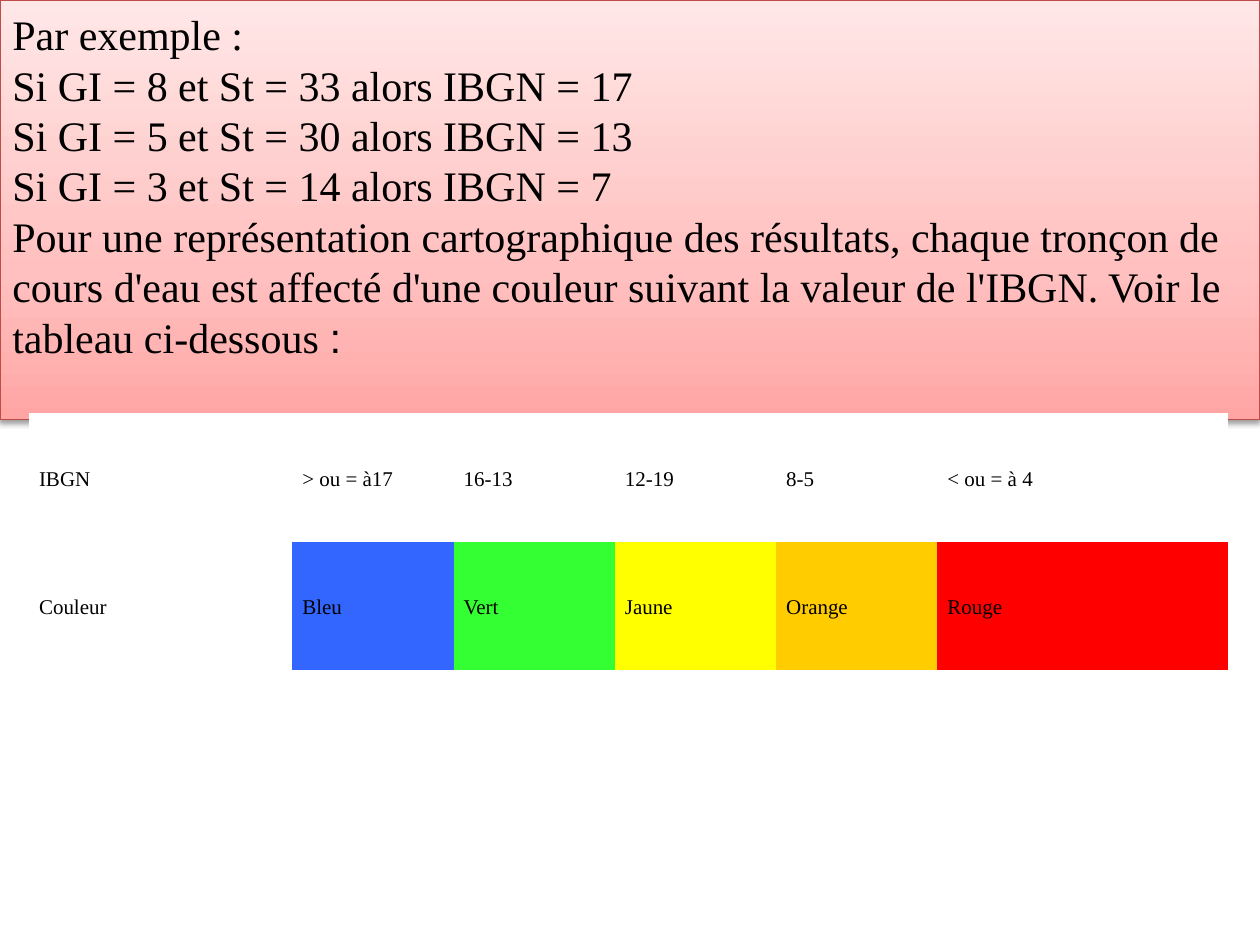
import copy
import pptx
import pptx.util
import pptx.dml.color
import pptx.enum.shapes
import pptx.enum.text
import pptx.oxml
import pptx.oxml.ns

Inches, Pt = pptx.util.Inches, pptx.util.Pt
Anchor = pptx.enum.text.MSO_ANCHOR
Align = pptx.enum.text.PP_ALIGN

RULES = [
    "Par exemple :\u00a0",
    "Si GI = 8 et St = 33 alors IBGN = 17\u00a0",
    "Si GI = 5 et St = 30 alors IBGN = 13\u00a0",
    "Si GI = 3 et St = 14 alors IBGN = 7",
]
NOTE = (
    "Pour une représentation cartographique des résultats, chaque tronçon de "
    "cours d'eau est affecté d'une couleur suivant la valeur de l'IBGN. "
    "Voir le tableau ci-dessous\u00a0"
)
SCALE = [
    ("IBGN", "Couleur", "FFFFFF", 2.09),
    ("> ou = à17", "Bleu", "3366FF", 1.28),
    ("16-13", "Vert", "33FF33", 1.28),
    ("12-19", "Jaune", "FFFF00", 1.28),
    ("8-5", "Orange", "FFCC00", 1.28),
    ("< ou = à 4", "Rouge", "FF0000", 2.31),
]
THEME = {
    "font": "Times New Roman",
    "mark": "Arial",
    "ink": "000000",
    "paper": "FFFFFF",
    "edge": "BF4C48",
    "fade": [(0, "FFA6A5"), (0.35, "FFC0BF"), (1, "FFE7E7")],
    "text": 24,
    "cell": 12,
}
PLAIN = "{2D5ABB26-0587-4C30-8999-92F81FD0307C}"
ROW = 1.02
PAD = 0.08


def rgb(code):
    return pptx.dml.color.RGBColor.from_string(code)


def style(run, size, face=THEME["font"]):
    run.font.size = Pt(size)
    run.font.name = face
    run.font.color.rgb = rgb(THEME["ink"])


def fade(fill):
    fill.gradient()
    fill.gradient_angle = 90
    first = fill.gradient_stops[0]._gs
    first.addnext(copy.deepcopy(first))
    for stop, (place, code) in zip(fill.gradient_stops, THEME["fade"]):
        stop.position = place
        stop.color.rgb = rgb(code)


def shade(shape):
    shape.shadow.inherit = False
    glow = pptx.oxml.parse_xml(
        f'<a:outerShdw {pptx.oxml.ns.nsdecls("a")} blurRad="{Pt(3.1)}" '
        f'dist="{Pt(1.6)}" dir="5400000" rotWithShape="0">'
        '<a:srgbClr val="000000"><a:alpha val="38000"/></a:srgbClr>'
        "</a:outerShdw>"
    )
    shape._element.spPr.find(pptx.oxml.ns.qn("a:effectLst")).append(glow)


def add_box(slide):
    box = slide.shapes.add_shape(
        pptx.enum.shapes.MSO_SHAPE.RECTANGLE, 0, 0, Inches(10), Inches(3.33)
    )
    fade(box.fill)
    box.line.color.rgb = rgb(THEME["edge"])
    box.line.width = Pt(0.75)
    shade(box)
    frame = box.text_frame
    frame.word_wrap = True
    frame.vertical_anchor = Anchor.TOP
    frame.margin_top = Inches(0.07)
    head = frame.paragraphs[0]
    head.text = "\n".join(RULES)
    note = frame.add_paragraph()
    note.text = NOTE
    mark = note.add_run()
    mark.text = ":"
    for para in frame.paragraphs:
        para.alignment = Align.LEFT
        for run in para.runs:
            style(run, THEME["text"])
    mark.font.name = THEME["mark"]


def fill_cell(cell, text, code):
    cell.fill.solid()
    cell.fill.fore_color.rgb = rgb(code)
    cell.vertical_anchor = Anchor.MIDDLE
    cell.margin_left = cell.margin_right = Inches(PAD)
    cell.margin_top = cell.margin_bottom = Inches(PAD)
    para = cell.text_frame.paragraphs[0]
    para.text = text
    para.line_spacing = 1.15
    style(para.runs[0], THEME["cell"])


def add_scale(slide):
    wide = sum(part[3] for part in SCALE)
    frame = slide.shapes.add_table(
        2, len(SCALE), Inches(0.23), Inches(3.28), Inches(wide), Inches(2 * ROW)
    )
    table = frame.table
    table._tbl.tblPr.find(pptx.oxml.ns.qn("a:tableStyleId")).text = PLAIN
    table.first_row = table.horz_banding = False
    for row in table.rows:
        row.height = Inches(ROW)
    for col, (span, name, code, width) in enumerate(SCALE):
        table.columns[col].width = Inches(width)
        fill_cell(table.cell(0, col), span, THEME["paper"])
        fill_cell(table.cell(1, col), name, code)


def main():
    deck = pptx.Presentation()
    deck.slide_width, deck.slide_height = Inches(10), Inches(7.5)
    slide = deck.slides.add_slide(deck.slide_layouts[6])
    add_box(slide)
    add_scale(slide)
    deck.save("out.pptx")


if __name__ == "__main__":
    main()
